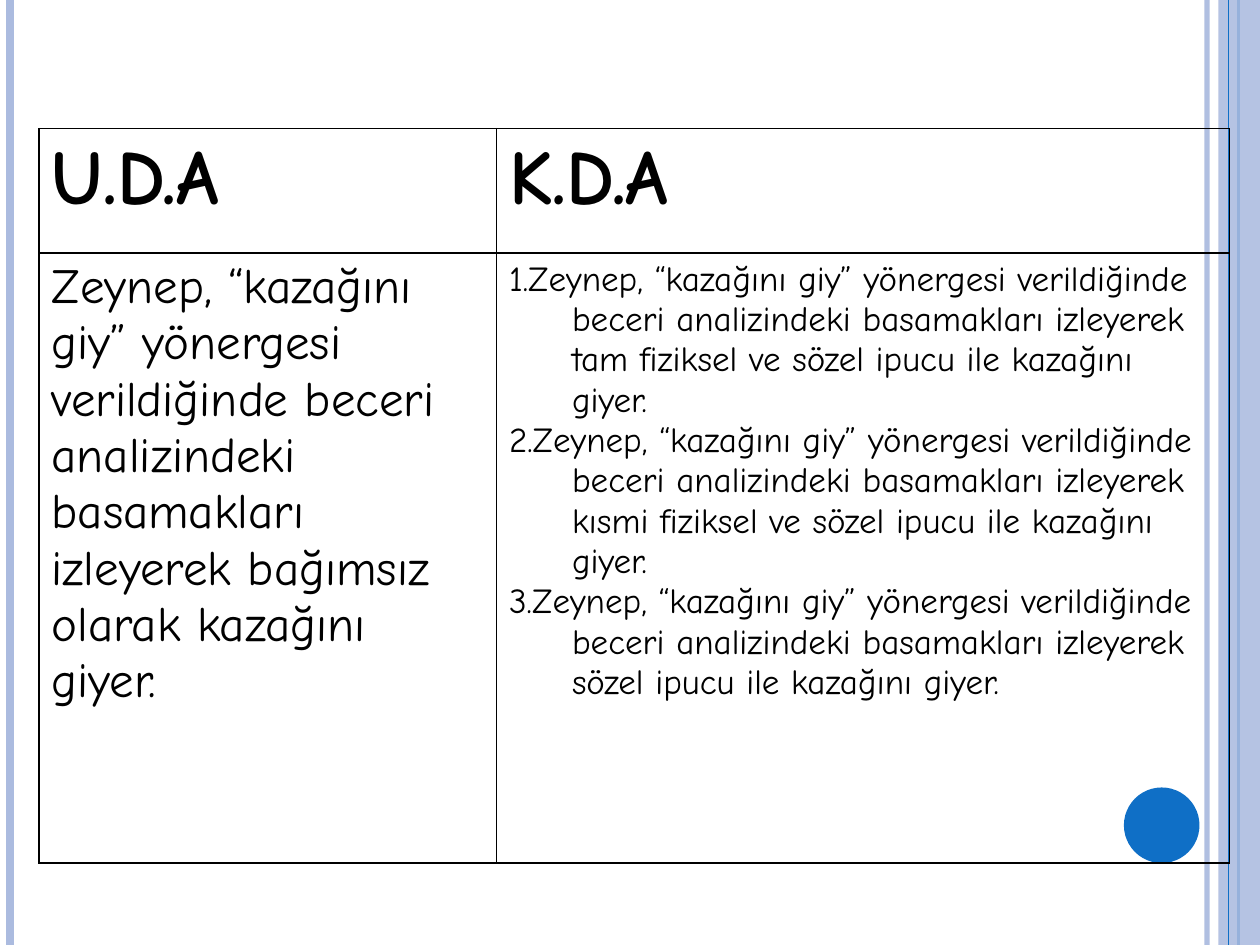
from pptx import Presentation
from pptx.dml.color import RGBColor
from pptx.enum.shapes import MSO_CONNECTOR, MSO_SHAPE
from pptx.enum.text import PP_ALIGN
from pptx.oxml import parse_xml
from pptx.oxml.ns import nsdecls
from pptx.util import Inches, Pt
from lxml.etree import SubElement

NAMESPACE = "{http://schemas.openxmlformats.org/drawingml/2006/main}"


def color(value):
    return RGBColor.from_string(value)


def set_alpha(fill_parent, percent):
    for node in fill_parent.iter(NAMESPACE + "srgbClr"):
        SubElement(node, NAMESPACE + "alpha", val=str(percent * 1000))


deck = Presentation()
deck.slide_width, deck.slide_height = Inches(10), Inches(7.5)
page = deck.slides.add_slide(deck.slide_layouts[6])

stripes = [
    (9.58, "ABBBDF", 3, 93),
    (0.08, "ABBBDF", 4.5, 100),
    (9.83, "0F6FC6", 1.5, 100),
    (9.75, "0F6FC6", 0.75, 100),
]
for x, hue, width, opacity in stripes:
    if x == 9.75:
        band = page.shapes.add_shape(
            MSO_SHAPE.RECTANGLE, Inches(9.67), Inches(0), Inches(0.33), Inches(7.5)
        )
        band.shadow.inherit = False
        band.fill.solid()
        band.fill.fore_color.rgb = color("ABBBDF")
        band.line.fill.background()
        set_alpha(band.fill._xPr, 87)
    stripe = page.shapes.add_connector(
        MSO_CONNECTOR.STRAIGHT, Inches(x), Inches(0), Inches(x), Inches(7.5)
    )
    stripe.line.color.rgb = color(hue)
    stripe.line.width = Pt(width)
    properties = stripe.line._get_or_add_ln().getparent()
    if opacity < 100:
        set_alpha(properties, opacity)
    SubElement(properties, NAMESPACE + "effectLst")

dot = page.shapes.add_shape(
    MSO_SHAPE.OVAL, Inches(8.92), Inches(6.25), Inches(0.6), Inches(0.6)
)
dot.shadow.inherit = False
dot.fill.solid()
dot.fill.fore_color.rgb = color("0F6FC6")
dot.line.fill.background()

opening = "Zeynep, “kazağını giy” yönergesi verildiğinde beceri analizindeki basamakları izleyerek "
ending = " kazağını giyer."
helps = ["tam fiziksel ve sözel ipucu ile", "kısmi fiziksel ve sözel ipucu ile", "sözel ipucu ile"]
steps = [f"{number}.{opening}{support}{ending}" for number, support in enumerate(helps, 1)]
heading = {"size": Pt(44), "bold": True}
goal = {"size": Pt(28), "bold": False}
step = {"size": Pt(20), "bold": False}
contents = [
    [(["U.D.A"], heading), (["K.D.A"], heading)],
    [([opening + "bağımsız olarak" + ending], goal), (steps, step)],
]

table = page.shapes.add_table(
    2, 2, Inches(0.31), Inches(1.02), Inches(9.45), Inches(5.83)
).table
table.first_row = False
table.horz_banding = False
for column, width in zip(table.columns, [3.63, 5.82]):
    column.width = Inches(width)
for row, height in zip(table.rows, [0.99, 4.84]):
    row.height = Inches(height)

for row, row_contents in zip(table.rows, contents):
    for cell, (texts, style) in zip(row.cells, row_contents):
        cell.fill.background()
        cell_properties = cell._tc.get_or_add_tcPr()
        for position, side in enumerate(["lnL", "lnR", "lnT", "lnB"]):
            border = parse_xml(
                f'<a:{side} {nsdecls("a")} w="12700"><a:solidFill>'
                f'<a:srgbClr val="000000"/></a:solidFill></a:{side}>'
            )
            cell_properties.insert(position, border)
        cell.text_frame.text = "\n".join(texts)
        for para in cell.text_frame.paragraphs:
            para.alignment = PP_ALIGN.JUSTIFY if style is heading else PP_ALIGN.LEFT
            if style is step:
                indents = para._p.get_or_add_pPr()
                indents.set("marL", str(Inches(0.5)))
                indents.set("indent", str(Inches(-0.5)))
            span = para.runs[0]
            for name, value in {"name": "Comic Neue", **style}.items():
                setattr(span.font, name, value)
            span.font.color.rgb = color("000000")

deck.save("out.pptx")
